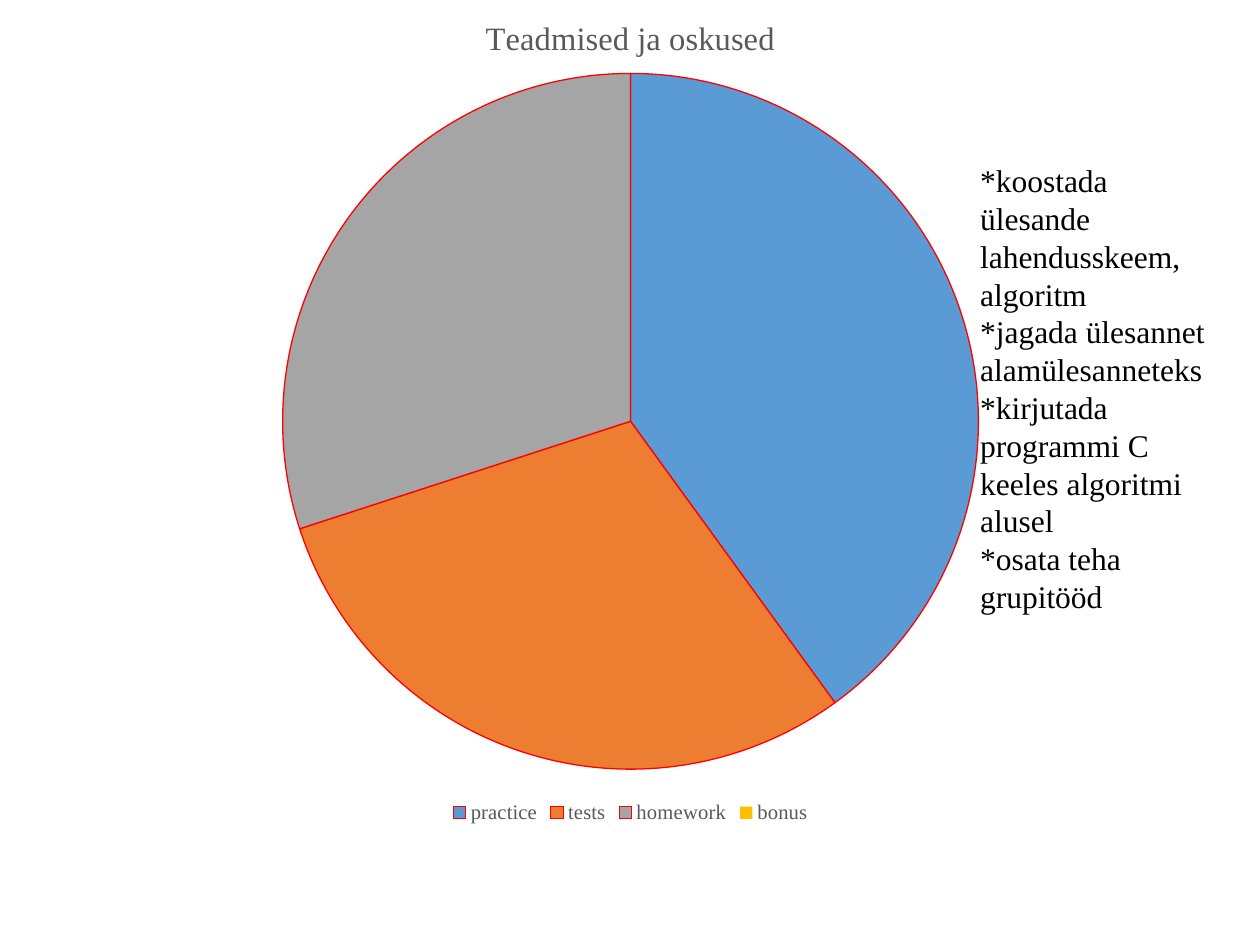
from lxml import etree
from pptx import Presentation
from pptx.chart.data import CategoryChartData
from pptx.dml.color import RGBColor
from pptx.enum.chart import XL_CHART_TYPE, XL_LEGEND_POSITION
from pptx.enum.text import MSO_AUTO_SIZE
from pptx.oxml.ns import qn
from pptx.util import Pt

FONT = "Times New Roman"
COLOURS = {
    "practice": "5B9BD5",
    "tests": "ED7D31",
    "homework": "A5A5A5",
    "bonus": "FFC000",
    "outline": "FF0000",
    "label": "595959",
    "text": "000000",
}
SHARES = {"practice": 40, "tests": 30, "homework": 30, "bonus": None}
SKILLS = [
    "*koostada ülesande lahendusskeem, algoritm",
    "*jagada ülesannet alamülesanneteks",
    "*kirjutada programmi C keeles algoritmi alusel",
    "*osata teha grupitööd",
]


def style_font(font, size, colour):
    font.name = FONT
    font.size = Pt(size)
    font.bold = False
    font.color.rgb = RGBColor.from_string(COLOURS[colour])


def place_plot(chart, x, y, w, h):
    """Fix the inner plot area, in fractions of the chart."""
    plot_area = chart.element.find(".//" + qn("c:plotArea"))
    for old_layout in plot_area.findall(qn("c:layout")):
        plot_area.remove(old_layout)
    layout = etree.Element(qn("c:layout"))
    manual = etree.SubElement(layout, qn("c:manualLayout"))
    settings = {"layoutTarget": "inner", "xMode": "edge", "yMode": "edge",
                "x": x, "y": y, "w": w, "h": h}
    for tag, value in settings.items():
        etree.SubElement(manual, qn("c:" + tag)).set("val", str(value))
    plot_area.insert(0, layout)


def add_grading_pie(slide, left, top, width, height):
    grading = CategoryChartData()
    grading.categories = list(SHARES)
    grading.add_series("Series 1", list(SHARES.values()))
    chart = slide.shapes.add_chart(
        XL_CHART_TYPE.PIE, Pt(left), Pt(top), Pt(width), Pt(height), grading).chart
    style_font(chart.font, 10, "text")

    # Title and legend
    chart.has_title = True
    heading = chart.chart_title.text_frame.paragraphs[0].add_run()
    heading.text = "Teadmised ja oskused"
    style_font(heading.font, 18.6, "label")
    chart.chart_title.include_in_layout = False
    chart.has_legend = True
    chart.legend.position = XL_LEGEND_POSITION.BOTTOM
    chart.legend.include_in_layout = False
    style_font(chart.legend.font, 11.8, "label")

    # Slices
    pie = chart.plots[0]
    pie.vary_by_categories = True
    series = pie.series[0]
    outlined = [series]
    for index, category in enumerate(SHARES):
        piece = series.points[index]
        piece.format.fill.solid()
        piece.format.fill.fore_color.rgb = RGBColor.from_string(COLOURS[category])
        if SHARES[category]:
            outlined.append(piece)
    for part in outlined:
        part.format.line.color.rgb = RGBColor.from_string(COLOURS["outline"])
        part.format.line.width = Pt(0.75)
    place_plot(chart, 0.15, 0.1, 0.7, 0.83)


def add_skills(slide, left, top, width, height):
    frame = slide.shapes.add_textbox(
        Pt(left), Pt(top), Pt(width), Pt(height)).text_frame
    frame.word_wrap = True
    frame.auto_size = MSO_AUTO_SIZE.SHAPE_TO_FIT_TEXT
    for index, skill in enumerate(SKILLS):
        paragraph = frame.add_paragraph() if index else frame.paragraphs[0]
        paragraph.line_spacing = Pt(21.6)
        run = paragraph.add_run()
        run.text = skill
        style_font(run.font, 18, "text")


def main():
    presentation = Presentation()
    presentation.slide_width, presentation.slide_height = Pt(720), Pt(540)
    slide = presentation.slides.add_slide(presentation.slide_layouts[6])
    add_grading_pie(slide, 76.3, -6.5, 568, 480.2)
    add_skills(slide, 553, 88.6, 149, 269.3)
    presentation.save("out.pptx")


if __name__ == "__main__":
    main()
